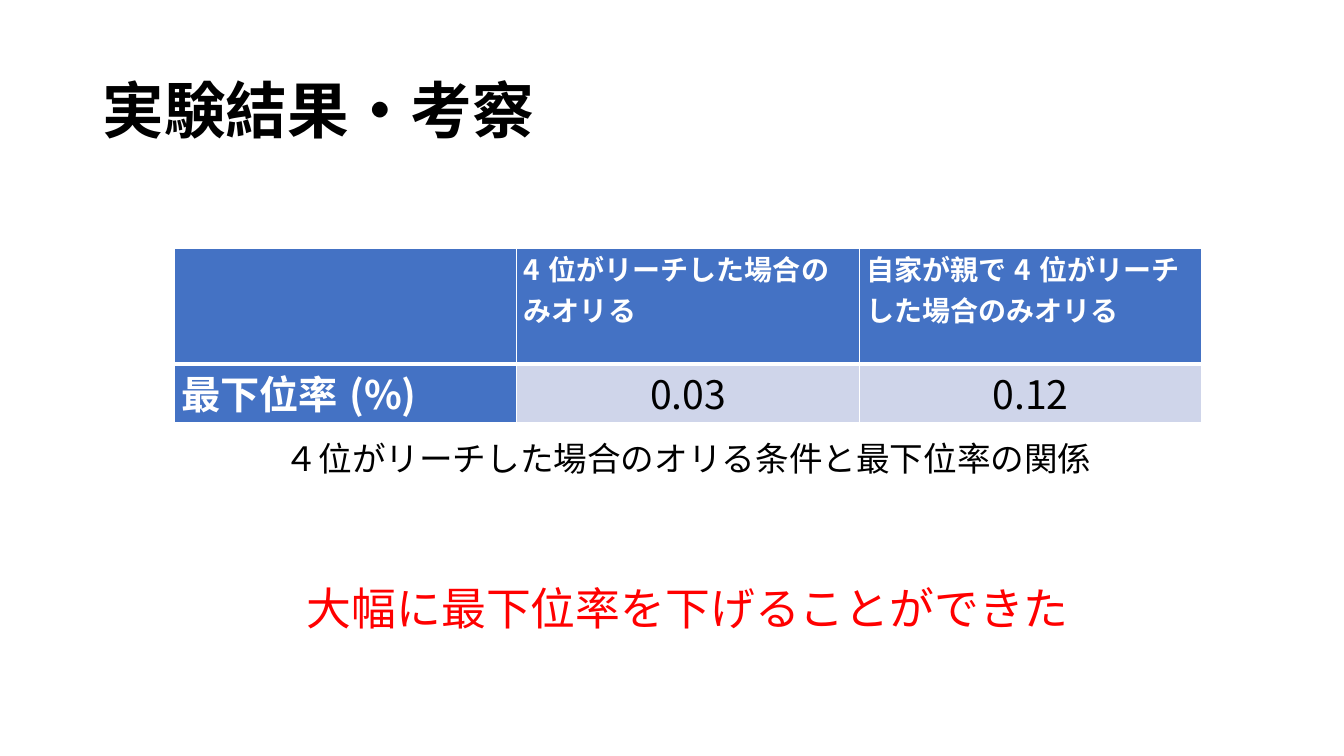
from lxml.etree import SubElement
from pptx import Presentation
from pptx.dml.color import RGBColor
from pptx.enum.text import MSO_ANCHOR, PP_ALIGN
from pptx.oxml.ns import qn
from pptx.util import Inches, Pt

FONT = "Noto Sans CJK JP"
COLORS = {"ink": "000000", "paper": "FFFFFF", "head": "4472C4",
          "band": "CFD5EA", "alert": "FF0000"}
LEFT, WIDTH = 1.73, 10.19
ROWS = [1.15, 0.58]
CELLS = [["", "4位がリーチした場合のみオリる", "自家が親で4位がリーチした場合のみオリる"],
         ["最下位率(%)", "0.03", "0.12"]]


def write(frame, text, size, color, bold=False, align=PP_ALIGN.LEFT):
    """Put one styled run in the first paragraph and return the paragraph."""
    para = frame.paragraphs[0]
    para.alignment = align
    run = para.add_run()
    run.text = text
    font = run.font
    font.size, font.bold, font.name = Pt(size), bold, FONT
    font.color.rgb = RGBColor.from_string(COLORS[color])
    SubElement(font._element, qn("a:ea"), typeface=FONT)
    return para


def label(slide, box, text, size, color, **style):
    """Add a wrapped text box and return its frame and paragraph."""
    frame = slide.shapes.add_textbox(*map(Inches, box)).text_frame
    frame.word_wrap = True
    return frame, write(frame, text, size, color, **style)


def edge(cell, base):
    """Draw white borders round a cell with the given bottom width."""
    props = cell._tc.get_or_add_tcPr()
    for side, width in zip("LRTB", (1, 1, 1, base)):
        line = SubElement(props, qn(f"a:ln{side}"), w=str(Pt(width)))
        fill = SubElement(line, qn("a:solidFill"))
        SubElement(fill, qn("a:srgbClr"), val=COLORS["paper"])


def grid(slide, top):
    """Add the table of results."""
    box = map(Inches, (LEFT, top, WIDTH, sum(ROWS)))
    table = slide.shapes.add_table(len(ROWS), len(CELLS[0]), *box).table
    for r, height in enumerate(ROWS):
        table.rows[r].height = Inches(height)
        for c, text in enumerate(CELLS[r]):
            cell = table.cell(r, c)
            head = r == 0 or c == 0
            edge(cell, 3 if r == 0 else 1)
            cell.fill.solid()
            cell.fill.fore_color.rgb = RGBColor.from_string(
                COLORS["head" if head else "band"])
            cell.margin_left = cell.margin_right = Inches(0.07)
            cell.margin_top = cell.margin_bottom = 0
            if text:
                write(cell.text_frame, text, 20 if r == 0 else 28,
                      "paper" if head else "ink", bold=head,
                      align=PP_ALIGN.LEFT if head else PP_ALIGN.CENTER)


def main():
    """Build the slide and save it."""
    deck = Presentation()
    deck.slide_width, deck.slide_height = Inches(13.33), Inches(7.5)
    slide = deck.slides.add_slide(deck.slide_layouts[6])
    frame, para = label(slide, (0.92, 0.4, 11.5, 1.45), "実験結果・考察",
                        44, "ink", bold=True)
    frame.vertical_anchor = MSO_ANCHOR.MIDDLE
    para.line_spacing = 0.9
    grid(slide, 2.46)
    label(slide, (LEFT, 4.3, WIDTH, 0.5),
          "４位がリーチした場合のオリる条件と最下位率の関係",
          24, "ink", align=PP_ALIGN.CENTER)
    label(slide, (LEFT, 5.71, WIDTH, 0.64),
          "大幅に最下位率を下げることができた",
          32, "alert", align=PP_ALIGN.CENTER)
    deck.save("out.pptx")


if __name__ == "__main__":
    main()
